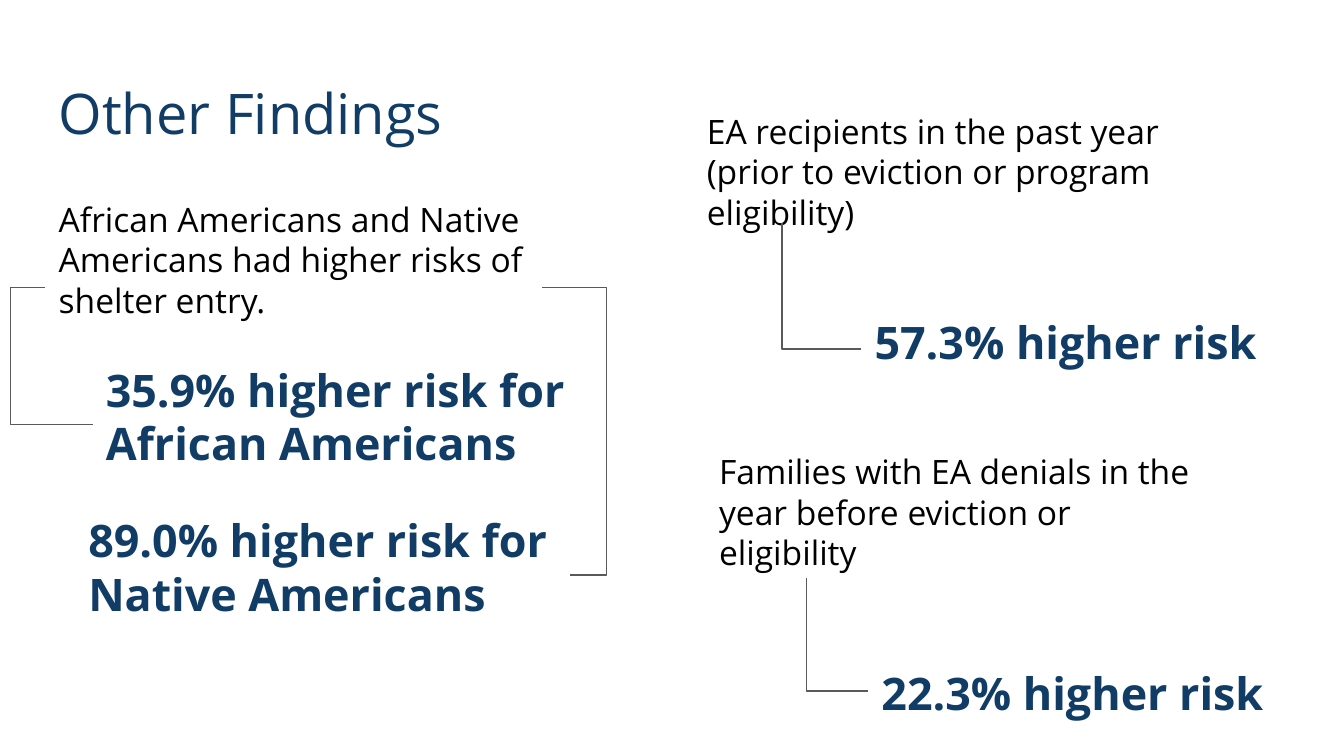
from dataclasses import dataclass

from lxml.etree import SubElement
from pptx import Presentation
from pptx.dml.color import RGBColor
from pptx.enum.shapes import MSO_CONNECTOR
from pptx.enum.text import MSO_ANCHOR, MSO_AUTO_SIZE, PP_ALIGN
from pptx.oxml.ns import qn
from pptx.util import Cm, Pt


@dataclass(frozen=True)
class Theme:
    font: str = "Open Sans"
    accent: RGBColor = RGBColor(0x11, 0x3C, 0x66)
    text: RGBColor = RGBColor(0, 0, 0)
    line: RGBColor = RGBColor(0x59, 0x59, 0x59)
    title_size: Pt = Pt(30)
    figure_size: Pt = Pt(24)
    statement_size: Pt = Pt(18)
    line_width: Pt = Pt(0.75)
    inset: Cm = Cm(0.25)


THEME = Theme()

# Text, then left, top, width and height in centimetres
STATEMENTS = [
    ("African Americans and Native Americans had higher risks of shelter entry.",
     (0.86, 3.51, 9.37, 3.86)),
    ("EA recipients in the past year (prior to eviction or program eligibility)",
     (13.11, 1.85, 10.57, 2.39)),
    ("Families with EA denials in the year before eviction or eligibility",
     (13.34, 8.28, 9.53, 2.39)),
]
FIGURES = [
    ("35.9% higher risk for African Americans", (1.75, 6.6, 9.37, 2.84)),
    ("89.0% higher risk for Native Americans", (1.42, 9.45, 9.37, 2.84)),
    ("57.3% higher risk", (16.28, 5.69, 7.85, 1.8)),
    ("22.3% higher risk", (16.41, 12.34, 7.72, 1.45)),
]
# Figure end, then statement end
CORNERS = [
    ((16.28, 6.6), (14.78, 4.22)),
    ((16.41, 13.06), (15.24, 10.92)),
]
# Statement end, figure end, then the x position of the upright part
BRACKETS = [
    ((0.86, 5.44), (1.75, 8.03), 0.2),
    ((10.24, 5.44), (10.77, 10.87), 11.46),
]


def write_text(shape, text, size, color, bold=False):
    frame = shape.text_frame
    frame.text = text
    frame.word_wrap = True
    frame.auto_size = MSO_AUTO_SIZE.NONE
    frame.vertical_anchor = MSO_ANCHOR.TOP
    frame.margin_left = frame.margin_right = THEME.inset
    frame.margin_top = frame.margin_bottom = THEME.inset
    paragraph = frame.paragraphs[0]
    paragraph.alignment = PP_ALIGN.LEFT
    font = paragraph.font
    font.name, font.size, font.bold = THEME.font, size, bold
    font.color.rgb = color


def set_title(slide, text, box):
    title = slide.shapes.title
    title.left, title.top, title.width, title.height = map(Cm, box)
    write_text(title, text, THEME.title_size, THEME.accent)


def add_statement(slide, text, box):
    shape = slide.shapes.add_textbox(*map(Cm, box))
    write_text(shape, text, THEME.statement_size, THEME.text)


def add_figure(slide, text, box):
    shape = slide.shapes.add_textbox(*map(Cm, box))
    write_text(shape, text, THEME.figure_size, THEME.accent, bold=True)


def add_elbow(slide, start, end):
    """Add an elbow connector and return its preset geometry element."""
    connector = slide.shapes.add_connector(
        MSO_CONNECTOR.ELBOW, *map(Cm, start + end))
    connector.line.color.rgb = THEME.line
    connector.line.width = THEME.line_width
    properties = connector._element.spPr
    SubElement(properties, qn("a:effectLst"))
    return properties.find(qn("a:prstGeom"))


def add_corner(slide, start, end):
    """Connect two points with one bend, horizontal part first."""
    add_elbow(slide, start, end).set("prst", "bentConnector2")


def add_bracket(slide, start, end, bend):
    """Connect two points by way of an upright part at x = bend."""
    geometry = add_elbow(slide, start, end)
    ratio = (bend - start[0]) / (end[0] - start[0])
    adjustments = geometry.find(qn("a:avLst"))
    if adjustments is None:
        adjustments = SubElement(geometry, qn("a:avLst"))
    SubElement(adjustments, qn("a:gd"), name="adj1",
               fmla=f"val {round(ratio * 100000)}")


def main():
    presentation = Presentation()
    presentation.slide_width, presentation.slide_height = Cm(25.4), Cm(14.29)
    title_only = presentation.slide_layouts[5]
    slide = presentation.slides.add_slide(title_only)

    set_title(slide, "Other Findings", (0.86, 1.24, 9.91, 2.26))
    for text, box in STATEMENTS:
        add_statement(slide, text, box)
    for text, box in FIGURES:
        add_figure(slide, text, box)
    for start, end in CORNERS:
        add_corner(slide, start, end)
    for start, end, bend in BRACKETS:
        add_bracket(slide, start, end, bend)

    presentation.save("out.pptx")


if __name__ == "__main__":
    main()
